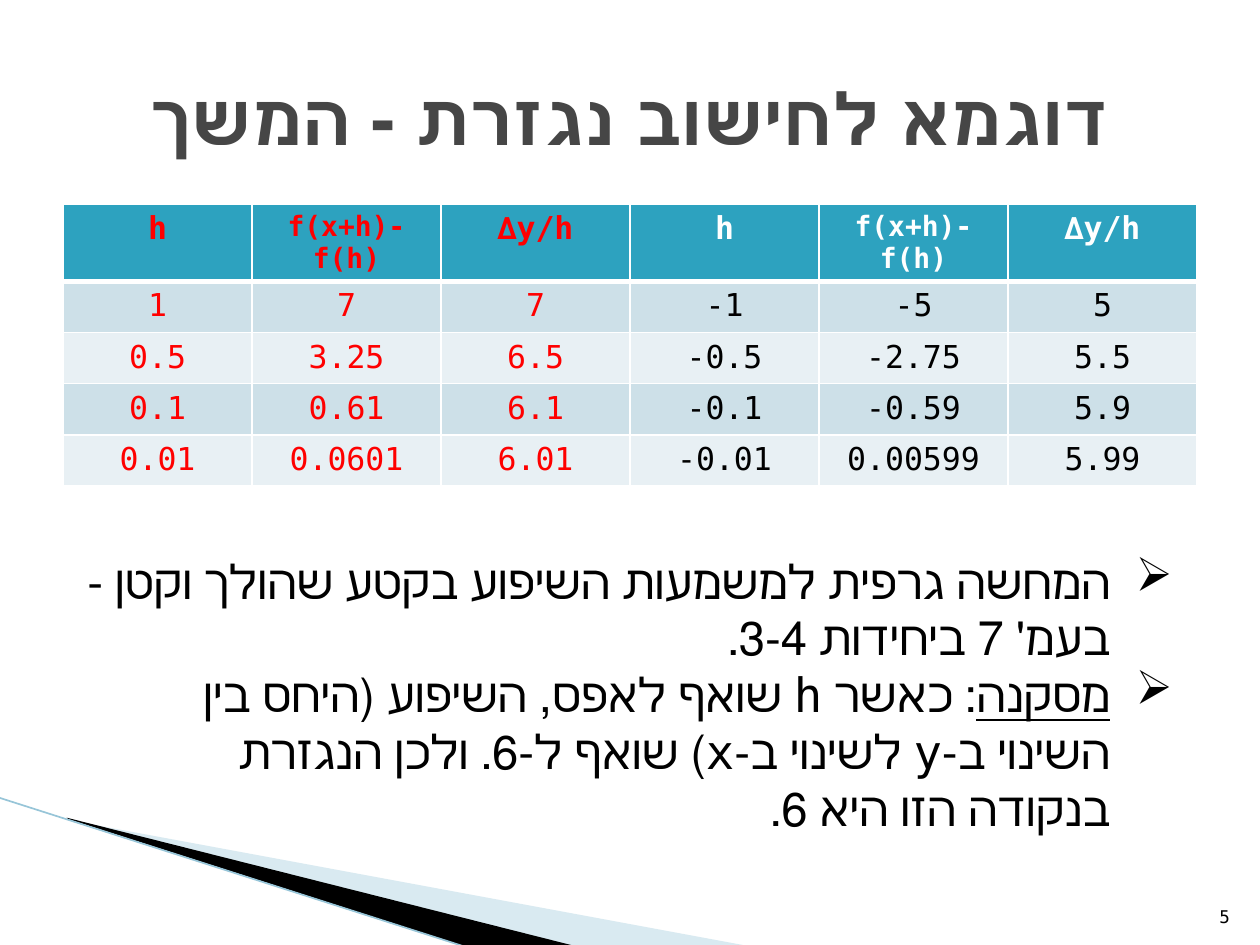
from lxml.etree import SubElement
from pptx import Presentation
from pptx.dml.color import RGBColor
from pptx.enum.shapes import MSO_CONNECTOR
from pptx.enum.text import MSO_ANCHOR, PP_ALIGN
from pptx.oxml.ns import qn
from pptx.util import Inches, Pt

FONT = "DejaVu Sans Mono"
BLACK = RGBColor(0x00, 0x00, 0x00)
WHITE = RGBColor(0xFF, 0xFF, 0xFF)
RED = RGBColor(0xFF, 0x00, 0x00)
GREY = RGBColor(0x46, 0x46, 0x46)
TEAL = RGBColor(0x2D, 0xA2, 0xBF)
BAND_DARK = RGBColor(0xCD, 0xE0, 0xE8)
BAND_LIGHT = RGBColor(0xE8, 0xF0, 0xF4)
WEDGE_BLUE = RGBColor(0xA0, 0xCB, 0xDC)
EDGE_BLUE = RGBColor(0x97, 0xC5, 0xD8)

deck = Presentation()
deck.slide_width, deck.slide_height = Inches(10), Inches(7.5)
page = deck.slides.add_slide(deck.slide_layouts[6])

# The page is a grid of 20 columns and 15 rows.
COLUMN = deck.slide_width / 20
ROW = deck.slide_height / 15


def place(*lengths):
    """Turn alternating column and row counts into slide lengths."""
    return [round(n * (ROW if i % 2 else COLUMN)) for i, n in enumerate(lengths)]


def add_span(para, text, size, color, bold=False, underline=False):
    span = para.add_run()
    span.text = text
    span.font.name, span.font.size = FONT, Pt(size)
    span.font.bold, span.font.underline = bold, underline
    span.font.color.rgb = color


# Corner wedges and their edge line
wedges = [
    (WEDGE_BLUE, 40, [(1.1, 13.02), (11.9, 15.02), (9.12, 15.02), (1.1, 13)]),
    (BLACK, 100, [(1.06, 12.98), (9.14, 15.02), (7.44, 15.04), (1.08, 13)]),
]
for color, opacity, corners in wedges:
    points = [place(*corner) for corner in corners]
    builder = page.shapes.build_freeform(*points[0], scale=1.0)
    builder.add_line_segments(points[1:], close=True)
    wedge = builder.convert_to_shape()
    wedge.shadow.inherit = False
    wedge.line.fill.background()
    wedge.fill.solid()
    wedge.fill.fore_color.rgb = color
    if opacity < 100:
        swatch = wedge.fill._xPr.find(qn("a:solidFill"))[0]
        SubElement(swatch, qn("a:alpha"), val=str(opacity * 1000))

edge = page.shapes.add_connector(MSO_CONNECTOR.STRAIGHT, *place(-0.02, 12.66, 7.42, 15.04))
edge.line.color.rgb = EDGE_BLUE
edge.line.width = Pt(0.95)
SubElement(edge._element.spPr, qn("a:effectLst"))

# Table of difference quotients: red for positive h, plain for negative h
quotients = [
    ["h", "f(x+h)-f(h)", "∆y/h"] * 2,
    ["1", "7", "7", "-1", "-5", "5"],
    ["0.5", "3.25", "6.5", "-0.5", "-2.75", "5.5"],
    ["0.1", "0.61", "6.1", "-0.1", "-0.59", "5.9"],
    ["0.01", "0.0601", "6.01", "-0.01", "0.00599", "5.99"],
]
table = page.shapes.add_table(5, 6, *place(1, 3.24, 18, 4.06)).table
table.first_row = table.horz_banding = False
for r, values in enumerate(quotients):
    header = r == 0
    for c, value in enumerate(values):
        cell = table.cell(r, c)
        properties = cell._tc.get_or_add_tcPr()
        for side in "LRTB":
            thick = (header and side == "B") or (r == 1 and side == "T")
            border = SubElement(properties, qn("a:ln" + side), w=str(Pt(3 if thick else 1)))
            SubElement(SubElement(border, qn("a:solidFill")), qn("a:srgbClr"), val=str(WHITE))
        cell.fill.solid()
        cell.fill.fore_color.rgb = TEAL if header else BAND_DARK if r % 2 else BAND_LIGHT
        para = cell.text_frame.paragraphs[0]
        para.alignment = PP_ALIGN.CENTER
        color = RED if c < 3 else WHITE if header else BLACK
        add_span(para, value, 16 if value.startswith("f") else 18, color, bold=header)

# Title
title = page.shapes.add_textbox(*place(1, 0.6, 18, 2.5)).text_frame
title.word_wrap = True
title.vertical_anchor = MSO_ANCHOR.MIDDLE
para = title.paragraphs[0]
para.alignment = PP_ALIGN.CENTER
para._p.get_or_add_pPr().set("rtl", "1")
add_span(para, "דוגמא לחישוב נגזרת - המשך", 41, GREY, bold=True)

# Conclusions: each bullet is a list of (text, underlined)
bullets = [
    [("המחשה גרפית למשמעות השיפוע בקטע שהולך וקטן - בעמ' 7 ביחידות 3-4.", False)],
    [
        ("מסקנה", True),
        (": כאשר h שואף לאפס, השיפוע (היחס בין השינוי ב-y לשינוי ב-x) שואף ל-6. "
         "ולכן הנגזרת בנקודה הזו היא 6.", False),
    ],
]
body = page.shapes.add_textbox(*place(1.16, 8.66, 17.66, 5.36)).text_frame
body.word_wrap = True
for i, bullet in enumerate(bullets):
    para = body.add_paragraph() if i else body.paragraphs[0]
    para.alignment = PP_ALIGN.RIGHT
    properties = para._p.get_or_add_pPr()
    properties.set("rtl", "1")
    properties.set("marL", str(Inches(0.5)))
    properties.set("indent", str(-Inches(0.5)))
    SubElement(properties, qn("a:buChar"), char="➢")
    for text, underlined in bullet:
        add_span(para, text, 27, BLACK, underline=underlined)

# Slide number
number = page.shapes.add_textbox(*place(18.92, 14.02, 0.8, 0.8)).text_frame
number.word_wrap = True
number.vertical_anchor = MSO_ANCHOR.BOTTOM
number.paragraphs[0].alignment = PP_ALIGN.RIGHT
add_span(number.paragraphs[0], "5", 10, BLACK)

deck.save("out.pptx")
